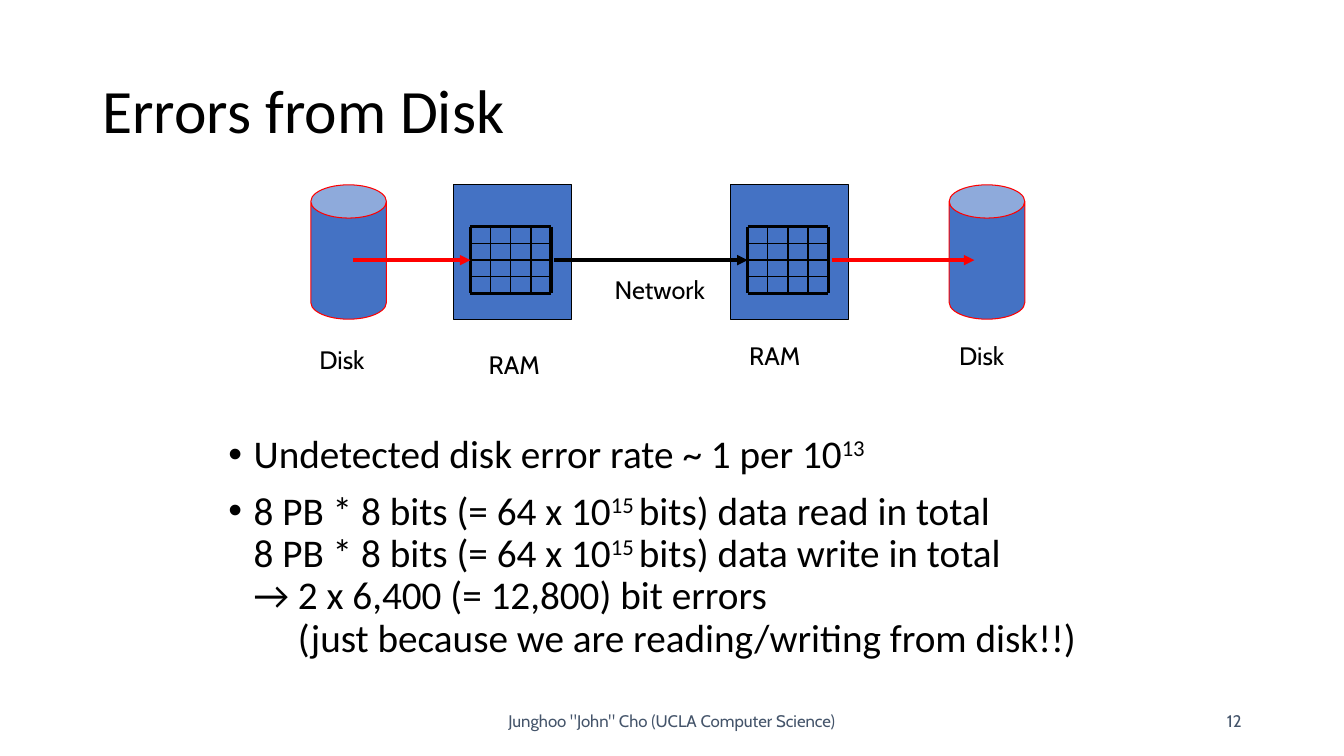
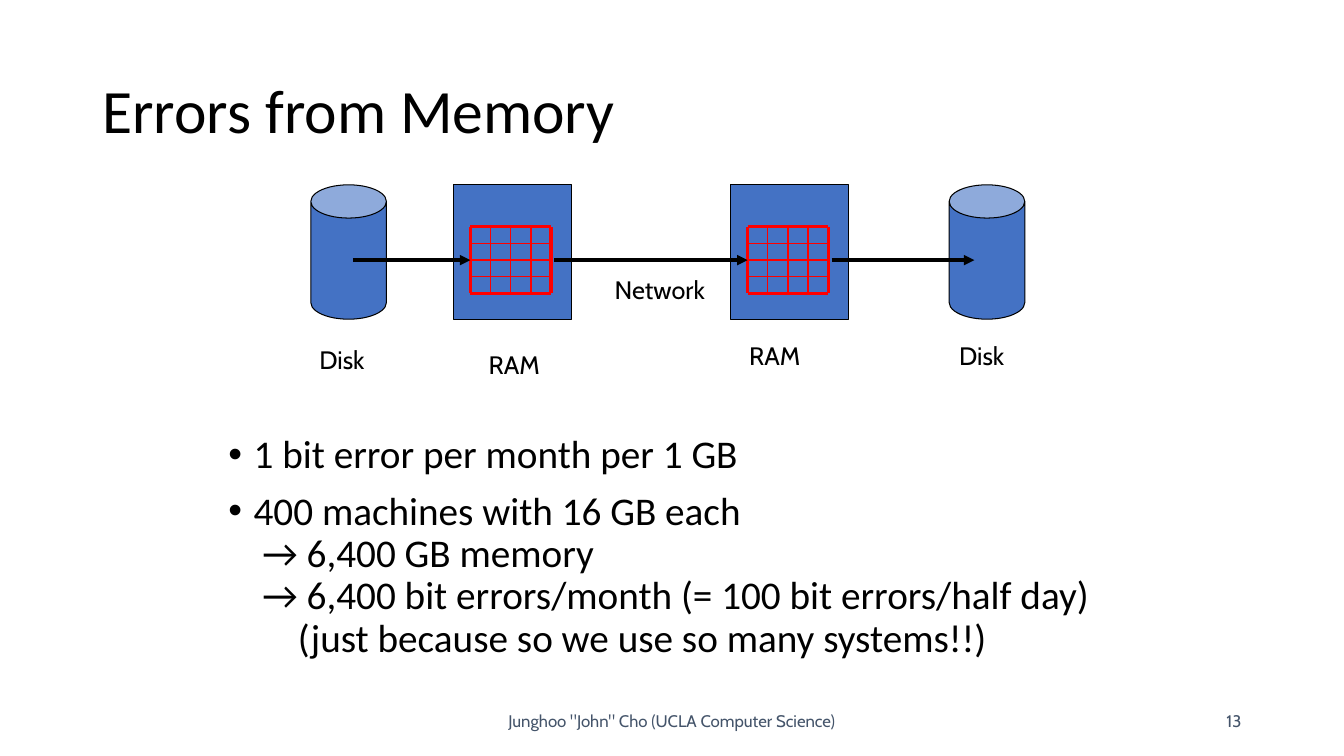
"""Build two slides on where data errors come from: disk and memory."""
from dataclasses import dataclass

from lxml.etree import SubElement
from pptx import Presentation
from pptx.dml.color import RGBColor
from pptx.enum.shapes import MSO_CONNECTOR, MSO_SHAPE
from pptx.enum.text import MSO_ANCHOR, MSO_AUTO_SIZE, PP_ALIGN
from pptx.oxml.ns import qn
from pptx.util import Pt


@dataclass(frozen=True)
class Theme:
    """Colours, fonts and type sizes of the deck."""
    ink: str = "000000"
    accent: str = "FF0000"
    fill: str = "4472C4"
    muted: str = "44546A"
    text_font: str = "Calibri"
    label_font: str = "Cabin"
    title_size: float = 44
    body_size: float = 28
    label_size: float = 18
    footer_size: float = 12
    line_spacing: float = 0.9
    paragraph_gap: float = 10
    outline: float = 0.75
    grid_inner: float = 1
    grid_outer: float = 2.25
    arrow: float = 2.5


THEME = Theme()
FOOTER = 'Junghoo "John" Cho (UCLA Computer Science)'

# fmt: off
SLIDES = [
    {
        "title": "Errors from Disk",
        "number": "12",
        "disk": THEME.accent,
        "memory": THEME.ink,
        "body": [
            ("bullet", 0, ["Undetected disk error rate ~ 1 per 10", "^13"]),
            ("bullet", 0, ["8 PB * 8 bits (= 64 x 10", "^15 ", "bits) data read in total"]),
            ("follow", 0, ["8 PB * 8 bits (= 64 x 10", "^15 ", "bits) data write in total"]),
            ("follow", 0, ["→ 2 x 6,400 (= 12,800) bit errors"]),
            ("follow", 31.6, ["(just because we are reading/writing from disk!!)"]),
        ],
    },
    {
        "title": "Errors from Memory",
        "number": "13",
        "disk": THEME.ink,
        "memory": THEME.accent,
        "body": [
            ("bullet", 0, ["1 bit error per month per 1 GB"]),
            ("bullet", 0, ["400 machines with 16 GB each"]),
            ("follow", 6.3, ["→ 6,400 GB memory"]),
            ("follow", 6.3, ["→ 6,400 bit errors/month (= 100 bit errors/half day)"]),
            ("follow", 31.6, ["(just because so we use so many systems!!)"]),
        ],
    },
]
# fmt: on

TITLE_BOX = (66, 28.8, 828, 104.4)
BODY_BOX = (156, 307, 648, 184)
FOOTER_BOX = (318, 500.4, 324, 28.8)
NUMBER_BOX = (678, 500.4, 216, 28.8)
LABELS = [
    ("Disk", (221, 242.6, 49.7, 28.8)),
    ("RAM", (342, 246.2, 51.8, 28.8)),
    ("Network", (432, 192.2, 82.1, 28.8)),
    ("RAM", (528, 239.8, 51.8, 28.8)),
    ("Disk", (678, 239.8, 49.7, 28.8)),
]
DEVICE_TOP, DEVICE_HEIGHT = 132, 96
DISK_LEFTS, DISK_WIDTH = (222, 678), 54
RAM_LEFTS, RAM_WIDTH = (324, 522), 84
GRID_INSET, GRID_TOP = 12, 162
GRID_CELLS, CELL_WIDTH, CELL_HEIGHT = 4, 14.4, 11.9
ARROW_Y = GRID_TOP + CELL_HEIGHT * GRID_CELLS / 2
ARROWS = [(252, 336, "disk"), (396, 534, None), (594, 696, "disk")]
BULLET_INDENT = 18


def points(values):
    """Turn plain numbers into point lengths."""
    return [Pt(value) for value in values]


def add_run(para, text, font, size, color):
    """Add one formatted run; a leading caret makes it superscript."""
    span = para.add_run()
    span.text = text.removeprefix("^")
    span.font.name = font
    span.font.size = Pt(size)
    span.font.color.rgb = RGBColor.from_string(color)
    if text.startswith("^"):
        span.font._element.set("baseline", "30000")


def add_label(slide, text, place, size, color, align=None):
    """Add a one-line text box; an aligned one is a fixed footer part."""
    box = slide.shapes.add_textbox(*points(place))
    frame = box.text_frame
    frame.word_wrap = align is not None
    if align is None:
        frame.auto_size = MSO_AUTO_SIZE.SHAPE_TO_FIT_TEXT
    else:
        frame.vertical_anchor = MSO_ANCHOR.MIDDLE
        frame.paragraphs[0].alignment = align
    add_run(frame.paragraphs[0], text, THEME.label_font, size, color)


def place_placeholder(box, place, anchor):
    """Move a placeholder and return its text frame."""
    box.left, box.top, box.width, box.height = points(place)
    frame = box.text_frame
    frame.word_wrap = True
    frame.auto_size = MSO_AUTO_SIZE.NONE
    frame.vertical_anchor = anchor
    return frame


def fill_title(slide, text):
    """Write the slide title."""
    frame = place_placeholder(slide.shapes.title, TITLE_BOX, MSO_ANCHOR.MIDDLE)
    para = frame.paragraphs[0]
    para.alignment = PP_ALIGN.LEFT
    para.line_spacing = THEME.line_spacing
    add_run(para, text, THEME.text_font, THEME.title_size, THEME.ink)


def fill_body(slide, rows):
    """Write bullets and the unbulleted lines that follow them."""
    frame = place_placeholder(slide.placeholders[1], BODY_BOX, MSO_ANCHOR.TOP)
    for index, (kind, extra, texts) in enumerate(rows):
        para = frame.add_paragraph() if index else frame.paragraphs[0]
        bulleted = kind == "bullet"
        para.line_spacing = THEME.line_spacing
        para.space_before = Pt(THEME.paragraph_gap if bulleted and index else 0)
        properties = para._p.get_or_add_pPr()
        properties.set("marL", str(Pt(BULLET_INDENT + extra)))
        properties.set("indent", str(Pt(-BULLET_INDENT if bulleted else 0)))
        if bulleted:
            SubElement(properties, qn("a:buFont")).set("typeface", "Arial")
            SubElement(properties, qn("a:buChar")).set("char", "•")
        else:
            SubElement(properties, qn("a:buNone"))
        for text in texts:
            add_run(para, text, THEME.text_font, THEME.body_size, THEME.ink)


def add_line(shapes, start, end, color, width, arrow=False):
    """Draw a straight line, with an arrowhead at its end if asked."""
    line = shapes.add_connector(MSO_CONNECTOR.STRAIGHT, *points(start + end))
    line.line.color.rgb = RGBColor.from_string(color)
    line.line.width = Pt(width)
    if arrow:
        SubElement(line.line._get_or_add_ln(), qn("a:tailEnd")).set("type", "triangle")
    SubElement(line._element.spPr, qn("a:effectLst"))


def add_device(shapes, kind, left, width, outline):
    """Draw the filled outline of a disk or memory unit."""
    device = shapes.add_shape(
        kind, *points((left, DEVICE_TOP, width, DEVICE_HEIGHT)))
    device.shadow.inherit = False
    device.fill.solid()
    device.fill.fore_color.rgb = RGBColor.from_string(THEME.fill)
    device.line.color.rgb = RGBColor.from_string(outline)
    device.line.width = Pt(THEME.outline)
    return device


def add_disk(slide, left, color):
    """Draw a disk as a can."""
    disk = add_device(slide.shapes, MSO_SHAPE.CAN, left, DISK_WIDTH, color)
    disk.adjustments[0] = 0.44


def add_memory(slide, left, color):
    """Draw a memory unit with its grid of cells as one group."""
    shapes = slide.shapes.add_group_shape().shapes
    add_device(shapes, MSO_SHAPE.RECTANGLE, left, RAM_WIDTH, THEME.ink)
    grid_left = left + GRID_INSET
    grid_right = grid_left + GRID_CELLS * CELL_WIDTH
    grid_bottom = GRID_TOP + GRID_CELLS * CELL_HEIGHT
    for step in range(GRID_CELLS + 1):
        width = THEME.grid_outer if step in (0, GRID_CELLS) else THEME.grid_inner
        x = grid_left + step * CELL_WIDTH
        y = GRID_TOP + step * CELL_HEIGHT
        add_line(shapes, (grid_left, y), (grid_right, y), color, width)
        add_line(shapes, (x, GRID_TOP), (x, grid_bottom), color, width)


def add_diagram(slide, content):
    """Draw the way of the data from disk to disk."""
    for left in DISK_LEFTS:
        add_disk(slide, left, content["disk"])
    for left in RAM_LEFTS:
        add_memory(slide, left, content["memory"])
    for start, end, role in ARROWS:
        color = content[role] if role else THEME.ink
        add_line(slide.shapes, (start, ARROW_Y), (end, ARROW_Y), color, THEME.arrow, True)
    for text, place in LABELS:
        add_label(slide, text, place, THEME.label_size, THEME.ink)


def add_footer(slide, number):
    """Add the author line and the slide number."""
    for text, place, align in (
        (FOOTER, FOOTER_BOX, PP_ALIGN.CENTER),
        (number, NUMBER_BOX, PP_ALIGN.RIGHT),
    ):
        add_label(slide, text, place, THEME.footer_size, THEME.muted, align)


def main():
    """Build and save the deck."""
    deck = Presentation()
    deck.slide_width, deck.slide_height = Pt(960), Pt(540)
    for content in SLIDES:
        slide = deck.slides.add_slide(deck.slide_layouts[1])
        fill_title(slide, content["title"])
        fill_body(slide, content["body"])
        add_diagram(slide, content)
        add_footer(slide, content["number"])
    deck.save("out.pptx")


if __name__ == "__main__":
    main()
